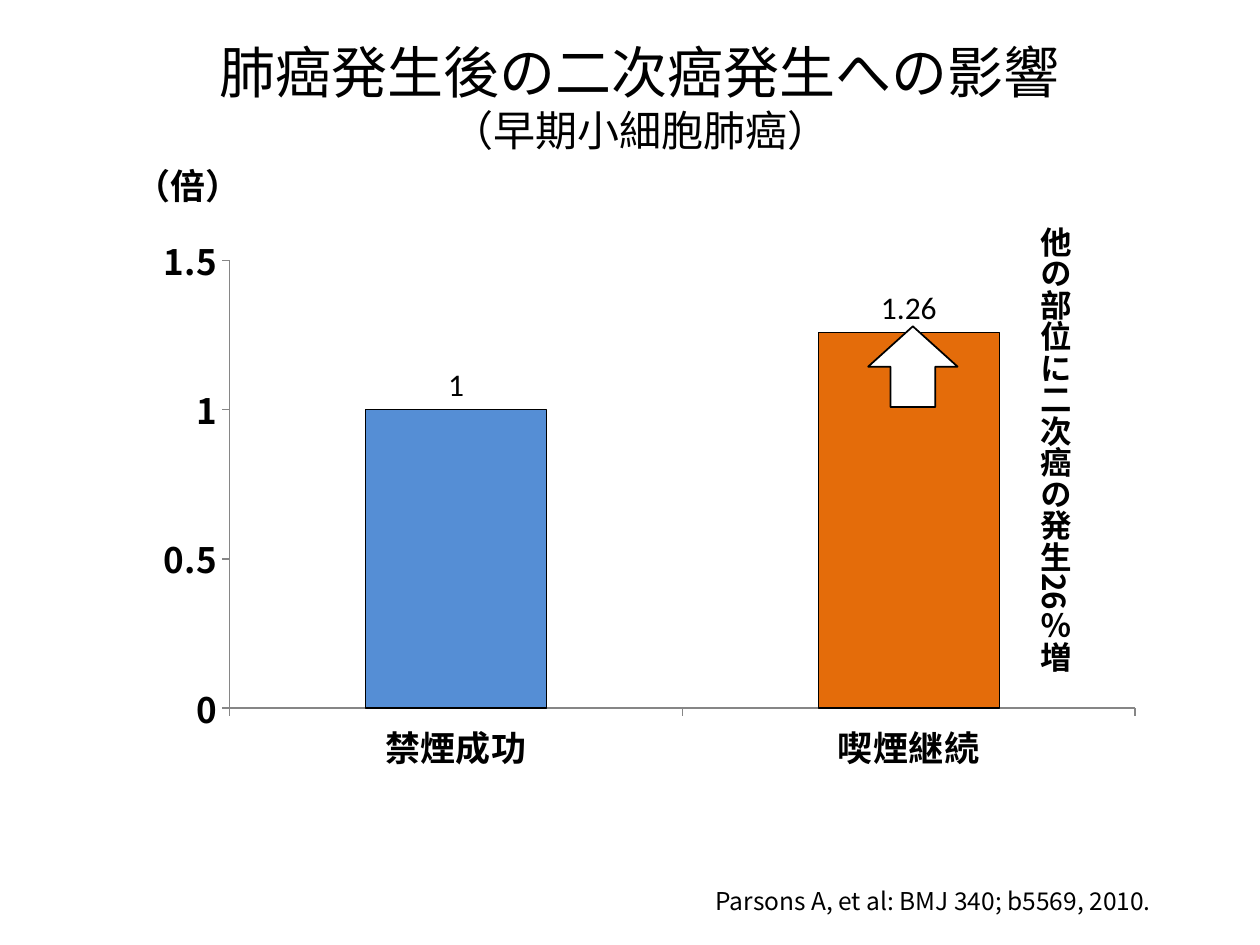
from dataclasses import dataclass

from lxml import etree
from pptx import Presentation
from pptx.chart.data import CategoryChartData
from pptx.dml.color import RGBColor
from pptx.enum.chart import XL_CHART_TYPE, XL_LABEL_POSITION, XL_TICK_MARK
from pptx.enum.shapes import MSO_SHAPE
from pptx.enum.text import MSO_ANCHOR, MSO_AUTO_SIZE, PP_ALIGN
from pptx.oxml.ns import qn
from pptx.util import Inches, Pt

COLUMN = XL_CHART_TYPE.COLUMN_CLUSTERED
OUTSIDE_END = XL_LABEL_POSITION.OUTSIDE_END
TICK_OUTSIDE = XL_TICK_MARK.OUTSIDE
UP_ARROW = MSO_SHAPE.UP_ARROW
MIDDLE = MSO_ANCHOR.MIDDLE
CENTER = PP_ALIGN.CENTER
FIT_SHAPE = MSO_AUTO_SIZE.SHAPE_TO_FIT_TEXT
NO_AUTOFIT = MSO_AUTO_SIZE.NONE


@dataclass(frozen=True)
class Theme:
    font: str = "Noto Sans CJK JP"
    label_font: str = "Calibri"
    black: RGBColor = RGBColor(0, 0, 0)
    white: RGBColor = RGBColor(255, 255, 255)
    axis: RGBColor = RGBColor(0x86, 0x86, 0x86)
    quit_smoking: RGBColor = RGBColor(0x55, 0x8E, 0xD5)
    keep_smoking: RGBColor = RGBColor(0xE4, 0x6C, 0x0A)
    title_size: int = 32
    subtitle_size: int = 24
    axis_size: int = 20
    label_size: int = 18
    citation_size: int = 14


THEME = Theme()


def format_font(font, size, bold=False, name=THEME.font):
    font.size = Pt(size)
    font.bold = bold
    font.name = name
    font.color.rgb = THEME.black


def format_run(run, size, bold=False):
    format_font(run.font, size, bold)
    etree.SubElement(run.font._element, qn("a:ea"), typeface=THEME.font)


def outline(line, width, color=THEME.black):
    line.color.rgb = color
    line.width = Pt(width)


def set_title(slide, heading, subheading):
    title = slide.shapes.title
    title.left, title.top = Inches(0.83), Inches(0.05)
    title.width, title.height = Inches(8.5), Inches(1.43)
    frame = title.text_frame
    frame.text = f"{heading}\v{subheading}"
    frame.vertical_anchor = MIDDLE
    frame.auto_size = NO_AUTOFIT
    paragraph = frame.paragraphs[0]
    paragraph.alignment = CENTER
    for run, size in zip(paragraph.runs, (THEME.title_size, THEME.subtitle_size)):
        format_run(run, size)
    line_break = paragraph._p.find(qn("a:br"))
    etree.SubElement(line_break, qn("a:rPr"), sz=str(THEME.title_size * 100))


def add_text(slide, text, left, top, width, height, size, bold=False, vertical=False):
    box = slide.shapes.add_textbox(
        Inches(left), Inches(top), Inches(width), Inches(height)
    )
    frame = box.text_frame
    frame.text = text
    frame.word_wrap = not vertical
    frame.auto_size = FIT_SHAPE
    if vertical:
        frame._txBody.bodyPr.set("vert", "eaVert")
    format_run(frame.paragraphs[0].runs[0], size, bold)


def place_plot(chart, **fractions):
    plot_area = chart._chartSpace.chart.plotArea
    for old_layout in plot_area.findall(qn("c:layout")):
        plot_area.remove(old_layout)
    layout = etree.Element(qn("c:layout"))
    manual = etree.SubElement(layout, qn("c:manualLayout"))
    settings = {"layoutTarget": "inner", "xMode": "edge", "yMode": "edge", **fractions}
    for tag, value in settings.items():
        etree.SubElement(manual, qn(f"c:{tag}"), val=str(value))
    plot_area.insert(0, layout)


def format_axis(axis):
    axis.has_major_gridlines = False
    axis.major_tick_mark = TICK_OUTSIDE
    axis.minor_tick_mark = XL_TICK_MARK.NONE
    outline(axis.format.line, 0.75, THEME.axis)
    format_font(axis.tick_labels.font, THEME.axis_size, True)


def add_risk_chart(slide):
    data = CategoryChartData()
    data.categories = ["禁煙成功", "喫煙継続"]
    data.add_series("Series 1", [1, 1.26])
    chart = slide.shapes.add_chart(
        COLUMN, Inches(1.14), Inches(1.78), Inches(8.03), Inches(4.44), data
    ).chart
    chart.has_legend = False
    chart.has_title = False
    format_font(chart.font, THEME.label_size, name=THEME.label_font)
    place_plot(chart, x=0.085, y=0.065, w=0.895, h=0.8)

    for axis in (chart.category_axis, chart.value_axis):
        format_axis(axis)
    chart.value_axis.minimum_scale = 0
    chart.value_axis.maximum_scale = 1.5
    chart.value_axis.major_unit = 0.5

    plot = chart.plots[0]
    plot.gap_width = 150
    plot.vary_by_categories = False
    series = plot.series[0]
    series.invert_if_negative = False
    highlight = series.points[1]
    for bar, color in ((series, THEME.quit_smoking), (highlight, THEME.keep_smoking)):
        bar.format.fill.solid()
        bar.format.fill.fore_color.rgb = color
        outline(bar.format.line, 0.75)
    labels = series.data_labels
    labels.show_value = True
    labels.position = OUTSIDE_END
    format_font(labels.font, THEME.label_size, name=THEME.label_font)


def add_increase_arrow(slide):
    arrow = slide.shapes.add_shape(
        UP_ARROW, Inches(6.89), Inches(2.59), Inches(0.71), Inches(0.64)
    )
    arrow.shadow.inherit = False
    arrow.fill.solid()
    arrow.fill.fore_color.rgb = THEME.white
    outline(arrow.line, 1)


def main():
    presentation = Presentation()
    presentation.slide_width = Inches(10)
    presentation.slide_height = Inches(7.5)
    slide = presentation.slides.add_slide(presentation.slide_layouts[5])

    set_title(slide, "肺癌発生後の二次癌発生への影響", "（早期小細胞肺癌）")
    add_risk_chart(slide)
    add_increase_arrow(slide)
    add_text(slide, "他の部位に二次癌の発生26％増", 8.07, 1.7, 0.5, 3.6,
             THEME.label_size, bold=True, vertical=True)
    add_text(slide, "Parsons A, et al: BMJ 340; b5569, 2010.", 5.58, 6.98, 4.22, 0.34,
             THEME.citation_size)
    add_text(slide, "（倍）", 0.98, 1.26, 1.1, 0.44, THEME.axis_size, bold=True)

    presentation.save("out.pptx")


if __name__ == "__main__":
    main()
